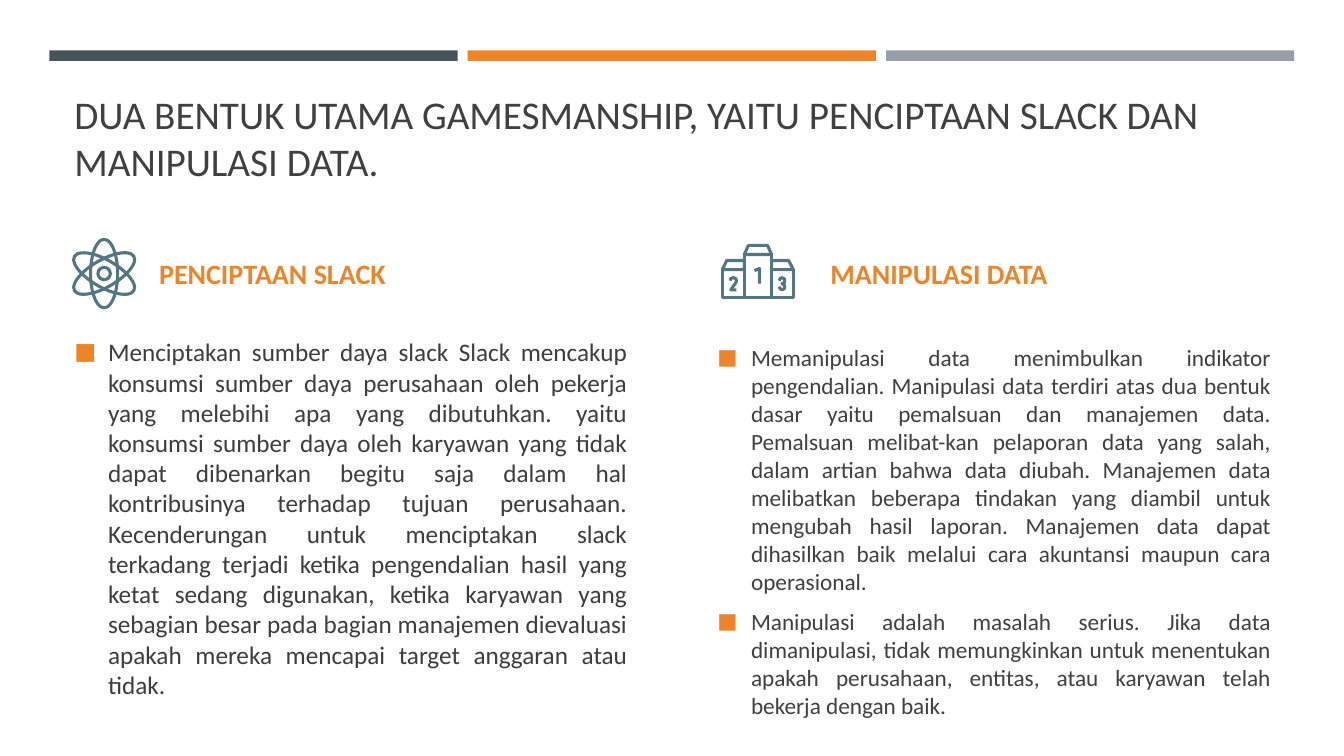
"""Slide on the two main forms of gamesmanship: slack creation and data manipulation."""
import pptx
import pptx.dml.color
import pptx.enum.shapes
import pptx.enum.text
import pptx.oxml
import pptx.oxml.ns
import pptx.util

Pt = pptx.util.Pt
SHAPES = pptx.enum.shapes.MSO_SHAPE
ALIGN = pptx.enum.text.PP_ALIGN
ANCHOR = pptx.enum.text.MSO_ANCHOR

FONT = "Calibri"
ORANGE, TEXT, ICON = "ED8428", "404040", "537685"
BAR_COLORS = ["465359", ORANGE, "969FA7"]
TITLE = "DUA BENTUK UTAMA GAMESMANSHIP, YAITU PENCIPTAAN SLACK DAN MANIPULASI DATA."
COLUMNS = [
    {
        "heading": "PENCIPTAAN SLACK",
        "heading_box": (106.6, 173.5, 319, 43.9),
        "body_box": (46.1, 236.9, 409, 276.5),
        "size": 18,
        "color": "3D3D3D",
        "body": [
            "Menciptakan sumber daya slack Slack mencakup konsumsi sumber daya perusahaan oleh "
            "pekerja yang melebihi apa yang dibutuhkan. yaitu konsumsi sumber daya oleh karyawan "
            "yang tidak dapat dibenarkan begitu saja dalam hal kontribusinya terhadap tujuan "
            "perusahaan. Kecenderungan untuk menciptakan slack terkadang terjadi ketika "
            "pengendalian hasil yang ketat sedang digunakan, ketika karyawan yang sebagian besar "
            "pada bagian manajemen dievaluasi apakah mereka mencapai target anggaran atau tidak.",
        ],
    },
    {
        "heading": "MANIPULASI DATA",
        "heading_box": (586.1, 173.5, 293.8, 43.9),
        "body_box": (505.4, 241.9, 409, 271.4),
        "size": 16.6,
        "color": TEXT,
        "body": [
            "Memanipulasi data menimbulkan indikator pengendalian. Manipulasi data terdiri atas "
            "dua bentuk dasar yaitu pemalsuan dan manajemen data. Pemalsuan melibat-kan pelaporan "
            "data yang salah, dalam artian bahwa data diubah. Manajemen data melibatkan beberapa "
            "tindakan yang diambil untuk mengubah hasil laporan. Manajemen data dapat dihasilkan "
            "baik melalui cara akuntansi maupun cara operasional.",
            "Manipulasi adalah masalah serius. Jika data dimanipulasi, tidak memungkinkan untuk "
            "menentukan apakah perusahaan, entitas, atau karyawan telah bekerja dengan baik.",
        ],
    },
]

ATOM_CENTER = (74.4, 195.4)
ATOM_RINGS = [(19.4, 49, 0), (19.4, 49, 60), (19.4, 49, -60), (8.9, 8.9, 0)]
PODIUM_ORIGIN = (514.8, 174.2)
PODIUM_BLOCKS = [
    [(1.1, 18.4), (16.9, 18.4), (16.9, 38.5), (1.1, 38.5)],
    [(36.4, 18.4), (51.8, 18.4), (51.8, 38.5), (36.4, 38.5)],
    [(16.9, 7.6), (36.4, 7.6), (36.4, 38.5), (16.9, 38.5)],
    [(1.1, 18.4), (4.3, 11.9), (16.9, 11.9), (16.9, 18.4)],
    [(36.4, 18.4), (36.4, 11.9), (48.6, 11.9), (51.8, 18.4)],
    [(16.9, 7.6), (19.8, 1.1), (33.5, 1.1), (36.4, 7.6)],
]
PODIUM_DIGITS = [
    [(24.1, 19.1), (27.7, 17.6), (27.7, 28.4)],
    [(6.8, 26.3), (7.2, 24.8), (9, 24.1), (10.8, 24.8), (11.2, 26.3), (10.8, 27.7),
     (7.2, 32.8), (11.2, 32.8)],
    [(41.8, 26.3), (42.5, 24.8), (43.9, 24.1), (45.7, 25.2), (45.7, 27.4), (43.9, 28.4),
     (45.7, 29.5), (45.7, 31.7), (43.9, 32.8), (42.5, 32), (41.8, 30.6)],
]


def rgb(value):
    return pptx.dml.color.RGBColor.from_string(value)


def add_bar(slide, index, color):
    left = 35.3 + index * 298.8
    bar = slide.shapes.add_shape(SHAPES.RECTANGLE, Pt(left), Pt(36), Pt(291.6), Pt(7.5))
    bar.shadow.inherit = False
    bar.fill.solid()
    bar.fill.fore_color.rgb = rgb(color)
    bar.line.fill.background()


def add_text(slide, box, texts, size, color, anchor, bold=False):
    shape = slide.shapes.add_textbox(*map(Pt, box))
    frame = shape.text_frame
    frame.word_wrap = True
    frame.vertical_anchor = anchor
    frame.text = "\n".join(texts)
    for paragraph in frame.paragraphs:
        paragraph.font.name = FONT
        paragraph.font.size = Pt(size)
        paragraph.font.bold = bold
        paragraph.font.color.rgb = rgb(color)
    return frame.paragraphs


def add_bullet(paragraph):
    properties = paragraph._p.get_or_add_pPr()
    properties.set("marL", str(Pt(24)))
    properties.set("indent", str(-Pt(24)))
    namespace = pptx.oxml.ns.nsdecls("a")
    defaults = properties.find(pptx.oxml.ns.qn("a:defRPr"))
    for xml in (
        f'<a:buClr {namespace}><a:srgbClr val="{ORANGE}"/></a:buClr>',
        f'<a:buSzPct {namespace} val="92000"/>',
        f'<a:buFont {namespace} typeface="{FONT}"/>',
        f'<a:buChar {namespace} char="■"/>',
    ):
        defaults.addprevious(pptx.oxml.parse_xml(xml))


def style_outline(shape):
    shape.shadow.inherit = False
    shape.fill.background()
    shape.line.color.rgb = rgb(ICON)
    shape.line.width = Pt(2.2)


def add_ring(slide, width, height, rotation):
    center_x, center_y = ATOM_CENTER
    ring = slide.shapes.add_shape(
        SHAPES.OVAL, Pt(center_x - width / 2), Pt(center_y - height / 2), Pt(width), Pt(height))
    ring.rotation = rotation
    style_outline(ring)


def add_podium_part(slide, points, close):
    left, top = PODIUM_ORIGIN
    corners = [(Pt(left + x), Pt(top + y)) for x, y in points]
    builder = slide.shapes.build_freeform(*corners[0])
    builder.add_line_segments(corners[1:], close=close)
    style_outline(builder.convert_to_shape())


def main():
    presentation = pptx.Presentation()
    presentation.slide_width = Pt(960)
    presentation.slide_height = Pt(540)
    slide = presentation.slides.add_slide(presentation.slide_layouts[6])

    for index, color in enumerate(BAR_COLORS):
        add_bar(slide, index, color)
    add_text(slide, (46.1, 57.6, 868.3, 77.8), [TITLE], 28, TEXT, ANCHOR.BOTTOM)

    for column in COLUMNS:
        add_text(slide, column["heading_box"], [column["heading"]], 20, ORANGE,
                 ANCHOR.MIDDLE, bold=True)
        for paragraph in add_text(slide, column["body_box"], column["body"],
                                  column["size"], column["color"], ANCHOR.TOP):
            paragraph.alignment = ALIGN.JUSTIFY
            paragraph.space_after = Pt(9.3)
            add_bullet(paragraph)

    for ring in ATOM_RINGS:
        add_ring(slide, *ring)
    for points in PODIUM_BLOCKS:
        add_podium_part(slide, points, close=True)
    for points in PODIUM_DIGITS:
        add_podium_part(slide, points, close=False)

    presentation.save("out.pptx")


if __name__ == "__main__":
    main()
